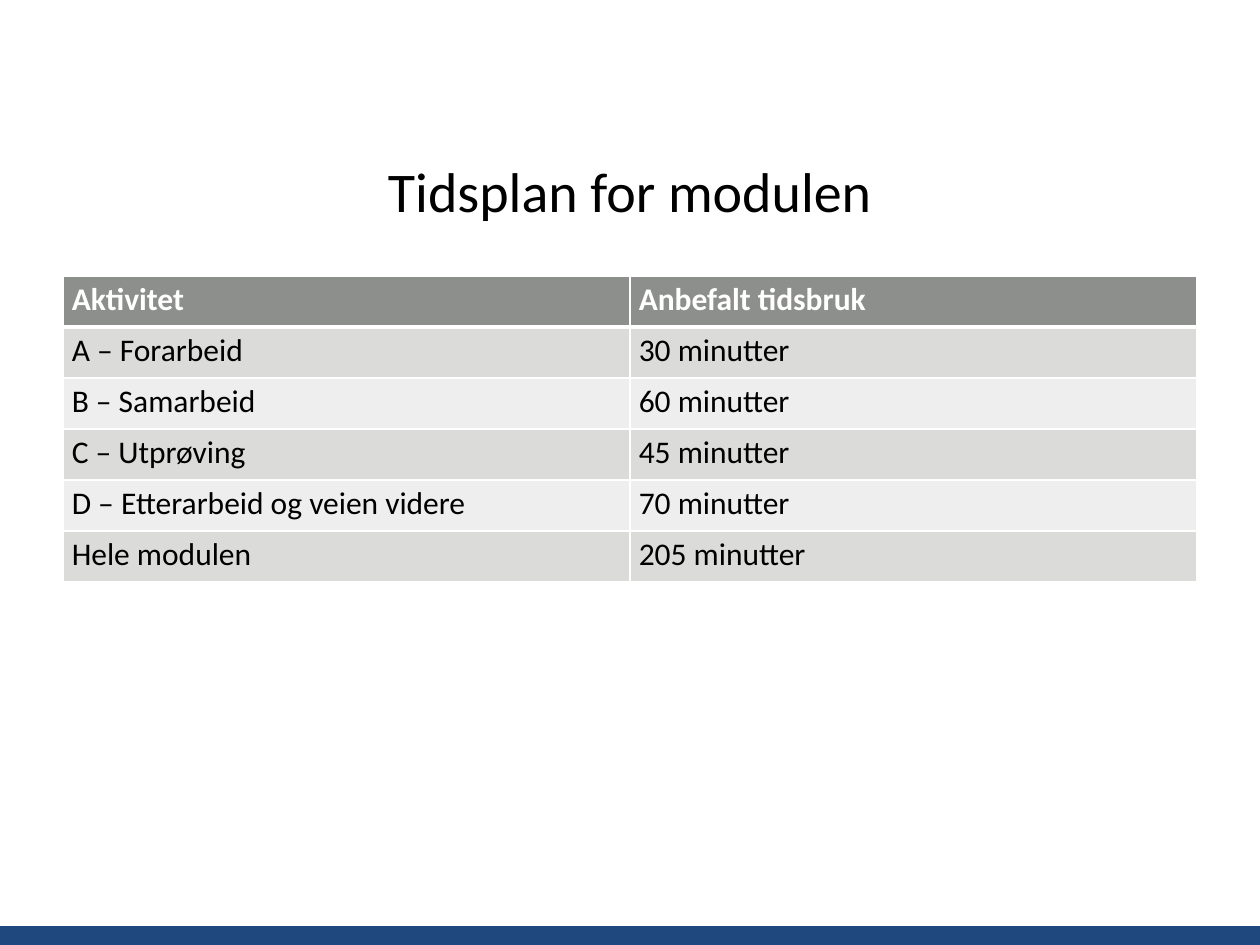
from lxml.etree import SubElement
from pptx import Presentation
from pptx.dml.color import RGBColor
from pptx.enum.shapes import MSO_SHAPE as Shape
from pptx.enum.text import MSO_ANCHOR as Anchor, PP_ALIGN as Align
from pptx.oxml.ns import qn
from pptx.util import Inches, Pt

WIDTH, HEIGHT = Inches(10), Inches(7.5)
MARGIN = 0.05  # share of the slide's width
FONT = "Calibri"
WHITE, BLACK, BLUE = "FFFFFF", "000000", "1F487E"
HEADER_FILL, BAND_FILLS = "8D8F8C", ("DBDBDA", "EEEEEE")

SCHEDULE = [
    ("Aktivitet", "Anbefalt tidsbruk"),
    ("A – Forarbeid", "30 minutter"),
    ("B – Samarbeid", "60 minutter"),
    ("C – Utprøving", "45 minutter"),
    ("D – Etterarbeid og veien videre", "70 minutter"),
    ("Hele modulen", "205 minutter"),
]


def colour(value):
    return RGBColor.from_string(value)


def share(left, top, width, height):
    """Turn shares of the slide's size into a box."""
    return (round(left * WIDTH), round(top * HEIGHT),
            round(width * WIDTH), round(height * HEIGHT))


def style_text(para, size, tint, bold=False):
    for span in para.runs:
        span.font.name, span.font.size, span.font.bold = FONT, Pt(size), bold
        span.font.color.rgb = colour(tint)


def add_footer_band(page, box):
    band = page.shapes.add_shape(Shape.RECTANGLE, *box)
    band.shadow.inherit = False
    band.fill.solid()
    band.fill.fore_color.rgb = colour(BLUE)
    band.line.fill.background()


def place_title(page, box, text):
    title = page.shapes.title
    title.left, title.top, title.width, title.height = box
    frame = title.text_frame
    frame.text = text
    frame.vertical_anchor = Anchor.MIDDLE
    frame.paragraphs[0].alignment = Align.CENTER
    style_text(frame.paragraphs[0], 32, BLACK)


def set_borders(cell, top, bottom):
    props = cell._tc.get_or_add_tcPr()
    for side, points in (("L", 1), ("R", 1), ("T", top), ("B", bottom)):
        line = SubElement(props, qn(f"a:ln{side}"), w=str(Pt(points)))
        fill = SubElement(line, qn("a:solidFill"))
        SubElement(fill, qn("a:srgbClr"), val=WHITE)


def style_cell(cell, text, row):
    header = row == 0
    set_borders(cell, top=3 if row == 1 else 1, bottom=3 if header else 1)
    cell.fill.solid()
    cell.fill.fore_color.rgb = colour(
        HEADER_FILL if header else BAND_FILLS[(row - 1) % 2])
    cell.margin_left = cell.margin_right = Inches(0.07)
    cell.margin_top = cell.margin_bottom = Inches(0.04)
    cell.text = text
    style_text(cell.text_frame.paragraphs[0], 18,
               WHITE if header else BLACK, bold=header)


def add_schedule(page, box, rows):
    table = page.shapes.add_table(len(rows), len(rows[0]), *box).table
    for row, texts in enumerate(rows):
        for column, text in enumerate(texts):
            style_cell(table.cell(row, column), text, row)


def main():
    deck = Presentation()
    deck.slide_width, deck.slide_height = WIDTH, HEIGHT
    page = deck.slides.add_slide(deck.slide_layouts[5])  # title only
    page.background.fill.solid()
    page.background.fill.fore_color.rgb = colour(WHITE)

    inner = 1 - 2 * MARGIN
    add_footer_band(page, share(0, 0.98, 1, 0.02))
    place_title(page, share(MARGIN, 1 / 7.5, inner, 1.01 / 7.5),
                "Tidsplan for modulen")
    add_schedule(page, share(MARGIN, 2.19 / 7.5, inner, 2.43 / 7.5), SCHEDULE)
    deck.save("out.pptx")


if __name__ == "__main__":
    main()
